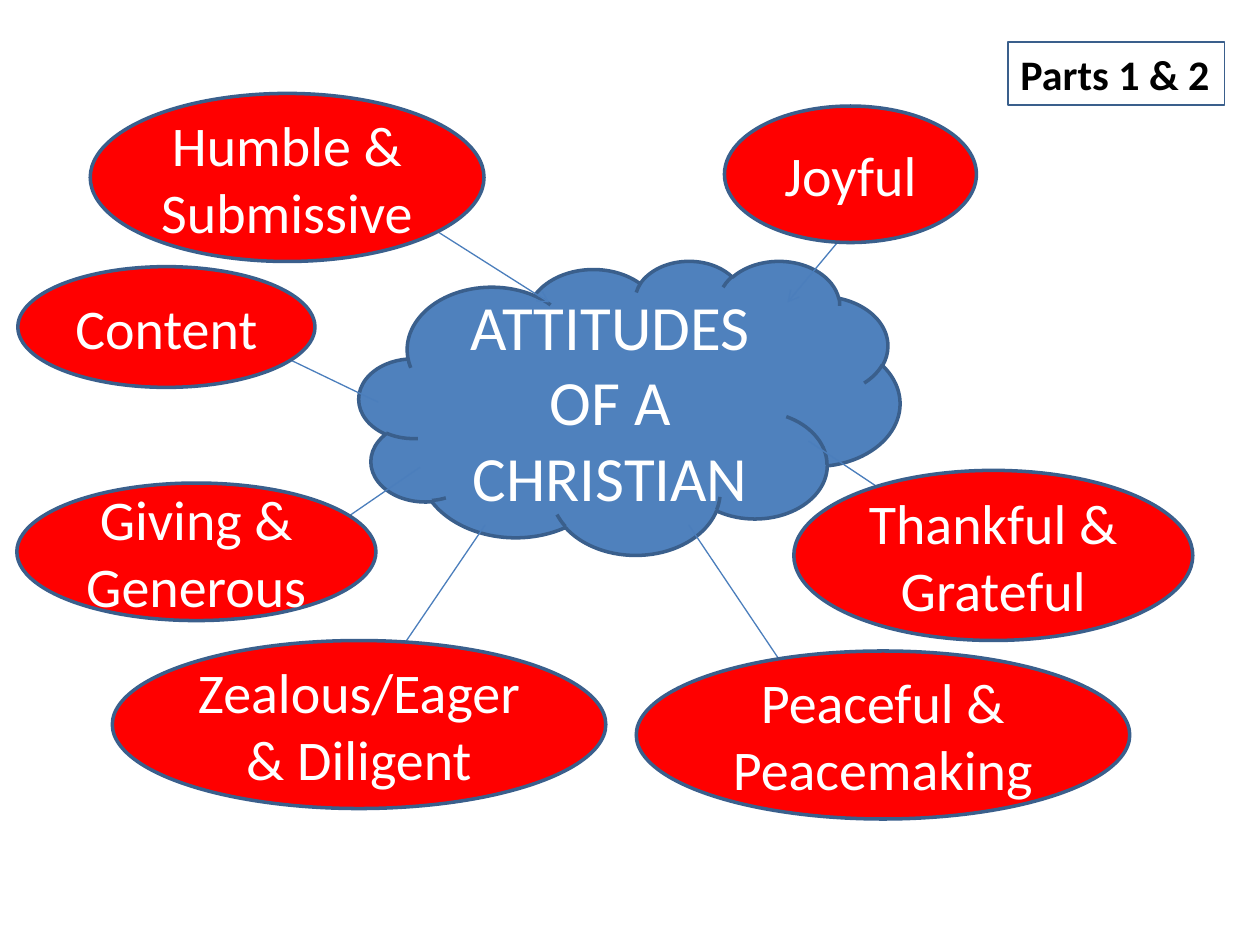
from lxml.etree import SubElement
from pptx import Presentation
from pptx.dml.color import RGBColor
from pptx.enum.shapes import MSO_CONNECTOR, MSO_SHAPE
from pptx.enum.text import MSO_ANCHOR, MSO_AUTO_SIZE, PP_ALIGN
from pptx.oxml.ns import qn
from pptx.util import Inches, Pt

COLUMNS, ROWS = 120, 90
WHITE, BLACK, RED, BLUE = "FFFFFF", "000000", "FF0000", "4F81BD"
OUTLINE, ARROW = "3A5F8C", "4B7EBC"

# Attitude, its ellipse (column, row, columns, rows), its arrow (start, end)
ATTITUDES = [
    ("Humble & Submissive", (8.6, 8.9, 37.5, 16), ((40, 21), (52.3, 28.8))),
    ("Zealous/Eager & Diligent", (10.7, 61, 47, 16), ((46.2, 50), (36, 65))),
    ("Joyful", (69, 10.1, 24, 13), ((81.5, 21), (75, 28.8))),
    ("Thankful & Grateful", (75.6, 44.8, 38, 16.2), ((77, 42), (89, 50))),
    ("Content", (1.7, 25.4, 28.3, 11.5), ((36, 38.3), (25, 33))),
    ("Giving & Generous", (1.6, 46, 34.2, 13.1), ((40, 44.5), (32, 50))),
    ("Peaceful & Peacemaking", (60.6, 62, 47, 16), ((65.6, 50), (75, 64))),
]


def color(hex_string):
    return RGBColor.from_string(hex_string)


class MindMap:
    """Style and current slide; lengths are columns and rows of the grid."""

    font = "Calibri"

    def __init__(self, deck):
        self.column = deck.slide_width / COLUMNS
        self.row = deck.slide_height / ROWS
        self.slide = deck.slides.add_slide(deck.slide_layouts[6])

    def place(self, *lengths):
        """Turn alternating columns and rows into slide lengths."""
        units = (self.column, self.row) * 2
        return [round(length * unit) for length, unit in zip(lengths, units)]

    def outline(self, line, hex_string, width):
        line.color.rgb = color(hex_string)
        line.width = Pt(width)

    def add_text(self, paragraph, text, size, hex_string, bold=False):
        run = paragraph.add_run()
        run.text = text
        run.font.name = self.font
        run.font.size = Pt(size)
        run.font.bold = bold
        run.font.color.rgb = color(hex_string)

    def bubble(self, preset, box, text, size, fill):
        bubble = self.slide.shapes.add_shape(preset, *self.place(*box))
        bubble.shadow.inherit = False
        bubble.fill.solid()
        bubble.fill.fore_color.rgb = color(fill)
        self.outline(bubble.line, OUTLINE, 2)
        frame = bubble.text_frame
        frame.word_wrap = True
        frame.vertical_anchor = MSO_ANCHOR.MIDDLE
        frame.paragraphs[0].alignment = PP_ALIGN.CENTER
        self.add_text(frame.paragraphs[0], text, size, WHITE)

    def arrow(self, start, end):
        arrow = self.slide.shapes.add_connector(
            MSO_CONNECTOR.STRAIGHT, *self.place(*start, *end))
        self.outline(arrow.line, ARROW, 0.75)
        properties = arrow.element.spPr
        SubElement(properties.find(qn("a:ln")), qn("a:tailEnd"), type="arrow")
        SubElement(properties, qn("a:effectLst"))

    def label(self, box, text, size):
        label = self.slide.shapes.add_textbox(*self.place(*box))
        self.outline(label.line, OUTLINE, 0.75)
        frame = label.text_frame
        frame.word_wrap = False
        frame.auto_size = MSO_AUTO_SIZE.SHAPE_TO_FIT_TEXT
        self.add_text(frame.paragraphs[0], text, size, BLACK, bold=True)


def main():
    deck = Presentation()
    deck.slide_width, deck.slide_height = Inches(10), Inches(7.5)
    mind_map = MindMap(deck)
    mind_map.bubble(MSO_SHAPE.CLOUD, (34.2, 24.8, 51.5, 28),
                    "ATTITUDES OF A CHRISTIAN", 36, BLUE)
    for attitude, ellipse, (start, end) in ATTITUDES:
        mind_map.arrow(start, end)
        mind_map.bubble(MSO_SHAPE.OVAL, ellipse, attitude, 32, RED)
    mind_map.label((96, 4, 20.6, 6), "Parts 1 & 2", 24)
    deck.save("out.pptx")


if __name__ == "__main__":
    main()
